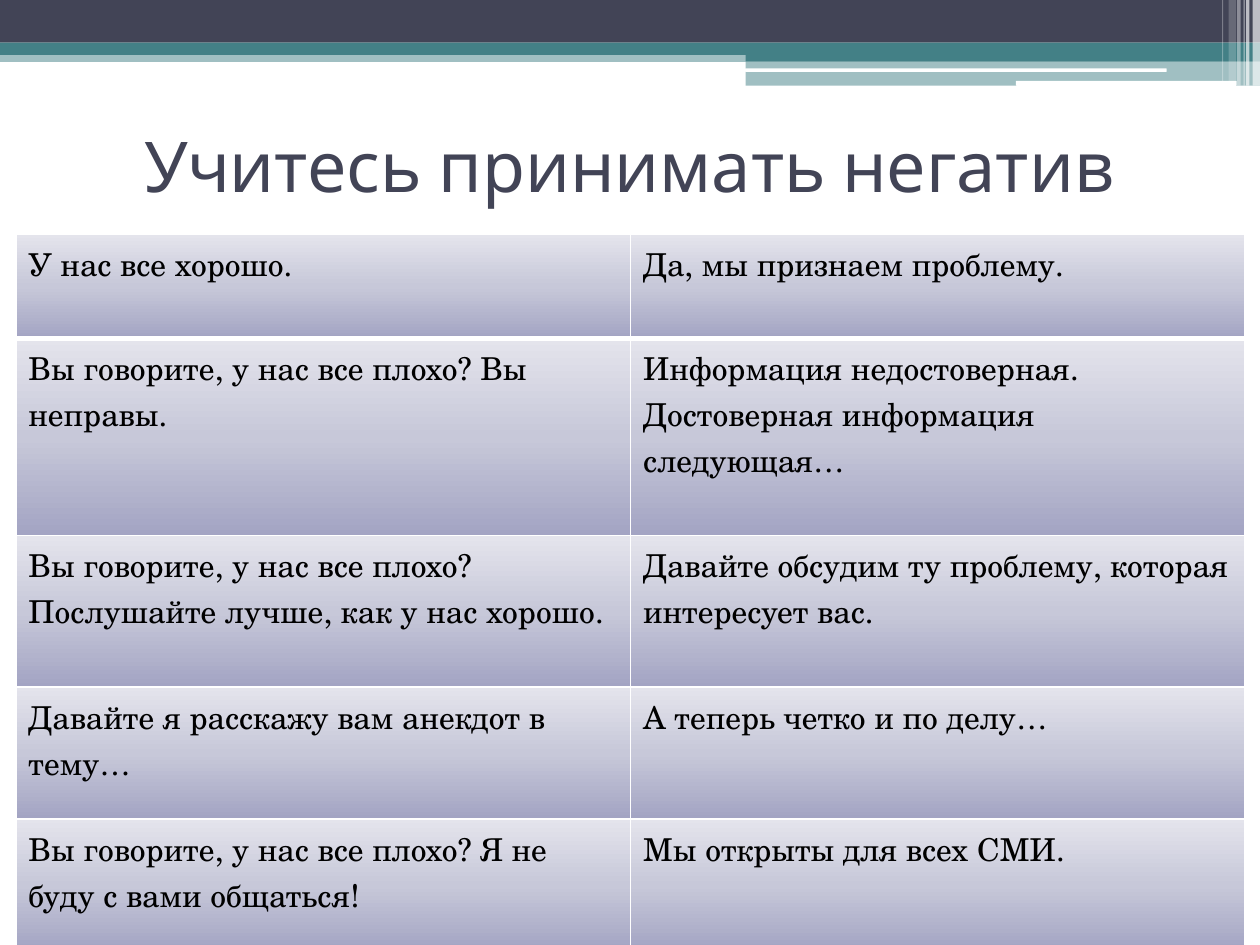
from dataclasses import dataclass

from lxml.etree import SubElement
from pptx import Presentation
from pptx.dml.color import RGBColor
from pptx.enum.shapes import MSO_SHAPE
from pptx.enum.text import MSO_ANCHOR, PP_ALIGN
from pptx.oxml.ns import qn
from pptx.util import Cm, Pt

WHITE = RGBColor(0xFF, 0xFF, 0xFF)
BLACK = RGBColor(0, 0, 0)
SLATE = RGBColor(0x42, 0x44, 0x56)
TEAL = RGBColor(0x43, 0x80, 0x86)
CELL_STOPS = (
    (0, RGBColor(0xA3, 0xA4, 0xC3)),
    (50, RGBColor(0xC7, 0xC8, 0xD9)),
    (100, RGBColor(0xE4, 0xE4, 0xEC)),
)
TITLE_FONT = "Karla"
TABLE_FONT = "TeX Gyre Schola"


@dataclass
class Bar:
    """A header bar: lengths in cm, opacity in percent."""
    left: float
    top: float
    width: float
    height: float
    color: RGBColor
    opacity: int = 100
    rounded: bool = False


@dataclass
class Row:
    height: float
    bad: str
    good: str


BARS = [
    Bar(0, 1.02, 25.4, 0.23, TEAL, 50),
    Bar(0, 0, 25.4, 0.86, SLATE),
    Bar(0, 0.86, 25.4, 0.25, TEAL),
    Bar(15.03, 0.99, 10.37, 0.24, TEAL),
    Bar(15.03, 1.23, 10.37, 0.5, TEAL, 50),
    Bar(15.02, 1.38, 8.5, 0.07, WHITE, rounded=True),
    Bar(20.48, 1.63, 4.45, 0.1, WHITE, rounded=True),
    Bar(25.25, 0, 0.15, 1.73, WHITE, 65),
    Bar(25.12, 0, 0.07, 1.73, WHITE, 65),
    Bar(25.07, 0, 0.02, 1.73, WHITE, 60),
    Bar(24.94, 0, 0.07, 1.73, WHITE, 40),
    Bar(24.77, 0, 0.15, 1.63, WHITE, 20),
    Bar(24.64, 0, 0.02, 1.63, WHITE, 30),
]

ROWS = [
    Row(2.1, "У нас все хорошо.", "Да, мы признаем проблему."),
    Row(3.98, "Вы говорите, у нас все плохо? Вы неправы.",
        "Информация недостоверная. Достоверная информация следующая…"),
    Row(3.05, "Вы говорите, у нас все плохо? Послушайте лучше, как у нас хорошо.",
        "Давайте обсудим ту проблему, которая интересует вас."),
    Row(2.66, "Давайте я расскажу вам анекдот в тему…",
        "А теперь четко и по делу…"),
    Row(2.66, "Вы говорите, у нас все плохо? Я не буду с вами общаться!",
        "Мы открыты для всех СМИ."),
]


def add_bar(slide, bar: Bar) -> None:
    kind = MSO_SHAPE.ROUNDED_RECTANGLE if bar.rounded else MSO_SHAPE.RECTANGLE
    sp = slide.shapes.add_shape(
        kind, Cm(bar.left), Cm(bar.top), Cm(bar.width), Cm(bar.height))
    sp.shadow.inherit = False
    sp.line.fill.background()
    sp.fill.solid()
    sp.fill.fore_color.rgb = bar.color
    if bar.opacity < 100:
        clr = sp.fill._xPr.find(".//" + qn("a:srgbClr"))
        SubElement(clr, qn("a:alpha"), val=str(bar.opacity * 1000))


def format_text(p, font: str, size: int, color: RGBColor) -> None:
    for r in p.runs:
        r.font.name = font
        r.font.size = Pt(size)
        r.font.color.rgb = color


def add_title(slide, text: str) -> None:
    tf = slide.shapes.add_textbox(Cm(1.27), Cm(1.52), Cm(22.86), Cm(3.61)).text_frame
    tf.word_wrap = True
    tf.vertical_anchor = MSO_ANCHOR.MIDDLE
    tf.text = text
    p = tf.paragraphs[0]
    p.alignment = PP_ALIGN.CENTER
    format_text(p, TITLE_FONT, 40, SLATE)


def style_cell(cell, borders: dict[str, float]) -> None:
    """Set border widths in points by side, and the upward gradient."""
    tc_pr = cell._tc.get_or_add_tcPr()
    for side in "LRTB":
        ln = SubElement(tc_pr, qn(f"a:ln{side}"), w=str(Pt(borders[side])))
        fill = SubElement(ln, qn("a:solidFill"))
        SubElement(fill, qn("a:srgbClr"), val=str(WHITE))
    grad = SubElement(tc_pr, qn("a:gradFill"), rotWithShape="1")
    stops = SubElement(grad, qn("a:gsLst"))
    for pos, color in CELL_STOPS:
        gs = SubElement(stops, qn("a:gs"), pos=str(pos * 1000))
        SubElement(gs, qn("a:srgbClr"), val=str(color))
    SubElement(grad, qn("a:lin"), ang=str(270 * 60000), scaled="0")


def add_answers(slide, rows: list[Row]) -> None:
    height = sum(row.height for row in rows)
    table = slide.shapes.add_table(
        len(rows), 2, Cm(0.32), Cm(4.72), Cm(24.78), Cm(height)).table
    table.first_row = False
    table.horz_banding = False
    for i, row in enumerate(rows):
        table.rows[i].height = Cm(row.height)
        borders = {"L": 1, "R": 1, "T": 3 if i == 1 else 1, "B": 3 if i == 0 else 1}
        for j, text in enumerate((row.bad, row.good)):
            cell = table.cell(i, j)
            cell.text = text
            format_text(cell.text_frame.paragraphs[0], TABLE_FONT, 18, BLACK)
            style_cell(cell, borders)


def main() -> None:
    prs = Presentation()
    prs.slide_width, prs.slide_height = Cm(25.4), Cm(19.05)
    s = prs.slides.add_slide(prs.slide_layouts[6])
    for bar in BARS:
        add_bar(s, bar)
    add_title(s, "Учитесь принимать негатив")
    add_answers(s, ROWS)
    prs.save("out.pptx")


if __name__ == "__main__":
    main()
